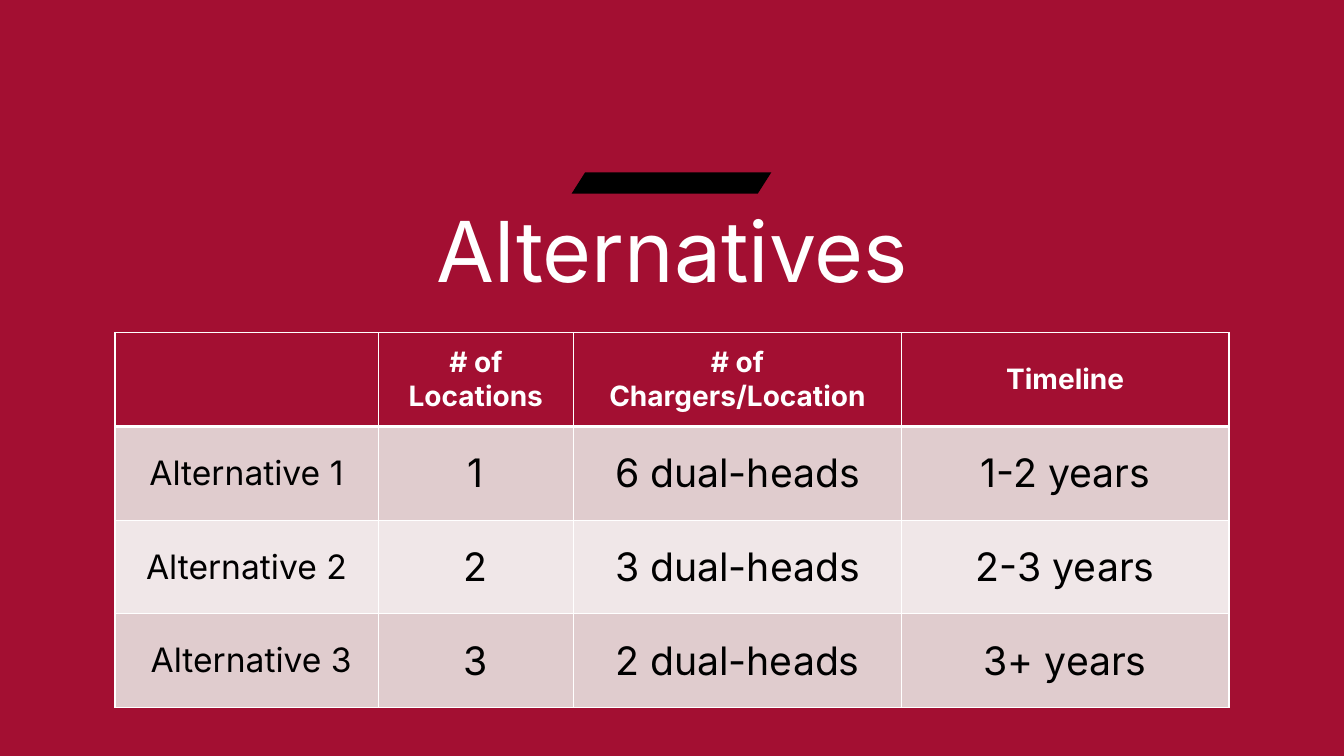
"""Build the Alternatives slide: an accent bar, a title and a comparison table."""
import dataclasses

import pptx
import pptx.dml.color
import pptx.enum.shapes
import pptx.enum.text
import pptx.oxml
import pptx.oxml.ns
import pptx.util

ALIGN = pptx.enum.text.PP_ALIGN
ANCHOR = pptx.enum.text.MSO_ANCHOR


@dataclasses.dataclass(frozen=True)
class Theme:
    font: str = "Inter"
    red: str = "A30F32"
    white: str = "FFFFFF"
    black: str = "000000"
    bands: tuple = ("E0CCCE", "F0E7E8")
    title: int = 60
    head: int = 20
    label: int = 24
    value: int = 28
    thin: int = 1
    thick: int = 3


def px(n):
    return pptx.util.Emu(n * 9144)


def rgb(color):
    return pptx.dml.color.RGBColor.from_string(color)


class Deck:
    def __init__(self, theme, width, height):
        self.theme = theme
        self.prs = pptx.Presentation()
        self.prs.slide_width, self.prs.slide_height = px(width), px(height)
        self.s = self.prs.slides.add_slide(self.prs.slide_layouts[6])
        self.paint(self.s.background.fill, theme.red)

    def paint(self, fill, color):
        fill.solid()
        fill.fore_color.rgb = rgb(color)

    def text(self, tf, text, size, color, bold=False):
        p = tf.paragraphs[0]
        p.alignment = ALIGN.CENTER
        r = p.add_run()
        r.text = text
        r.font.name, r.font.size, r.font.bold = self.theme.font, pptx.util.Pt(size), bold
        r.font.color.rgb = rgb(color)
        return p

    def title(self, box, text):
        sp = self.s.shapes.add_textbox(*map(px, box))
        tf = sp.text_frame
        tf.word_wrap = True
        tf.vertical_anchor = ANCHOR.TOP
        self.text(tf, text, self.theme.title, self.theme.white).line_spacing = 0.9

    def bar(self, box, slant):
        kind = pptx.enum.shapes.MSO_SHAPE.PARALLELOGRAM
        sp = self.s.shapes.add_shape(kind, *map(px, box))
        sp.adjustments[0] = slant
        sp.shadow.inherit = False
        self.paint(sp.fill, self.theme.black)
        sp.line.fill.background()

    def borders(self, cell, **widths):
        tc_pr = cell._tc.get_or_add_tcPr()
        for side in "LRTB":
            width = pptx.util.Pt(widths.get(side, self.theme.thin))
            tc_pr.append(pptx.oxml.parse_xml(
                f'<a:ln{side} {pptx.oxml.ns.nsdecls("a")} w="{width}"><a:solidFill>'
                f'<a:srgbClr val="{self.theme.white}"/></a:solidFill></a:ln{side}>'))

    def cell(self, cell, i, j, text):
        t = self.theme
        edges = {0: {"B": t.thick}, 1: {"T": t.thick}}
        self.borders(cell, **edges.get(i, {}))
        self.paint(cell.fill, t.bands[(i - 1) % 2] if i else t.red)
        cell.vertical_anchor = ANCHOR.MIDDLE
        if i == 0:
            self.text(cell.text_frame, text, t.head, t.white, bold=True)
        else:
            self.text(cell.text_frame, text, t.value if j else t.label, t.black)

    def table(self, left, top, widths, row_height, rows):
        frame = self.s.shapes.add_table(
            len(rows), len(widths), px(left), px(top),
            px(sum(widths)), px(row_height * len(rows)))
        tbl = frame.table
        tbl.first_row = tbl.horz_banding = False
        for col, width in zip(tbl.columns, widths):
            col.width = px(width)
        for i, row in enumerate(rows):
            tbl.rows[i].height = px(row_height)
            for j, text in enumerate(row):
                self.cell(tbl.cell(i, j), i, j, text)


def main():
    deck = Deck(Theme(), 1333, 750)
    deck.title((204, 203, 926, 91), "Alternatives")
    deck.bar((567, 171, 198, 21), 0.635)
    deck.table(114, 330, (261, 194, 325, 325), 93, [
        ("", "# of Locations", "# of Chargers/Location", "Timeline"),
        ("Alternative 1", "1", "6 dual-heads", "1-2 years"),
        ("Alternative 2", "2", "3 dual-heads", "2-3 years"),
        (" Alternative 3", "3", "2 dual-heads", "3+ years"),
    ])
    deck.prs.save("out.pptx")


if __name__ == "__main__":
    main()
